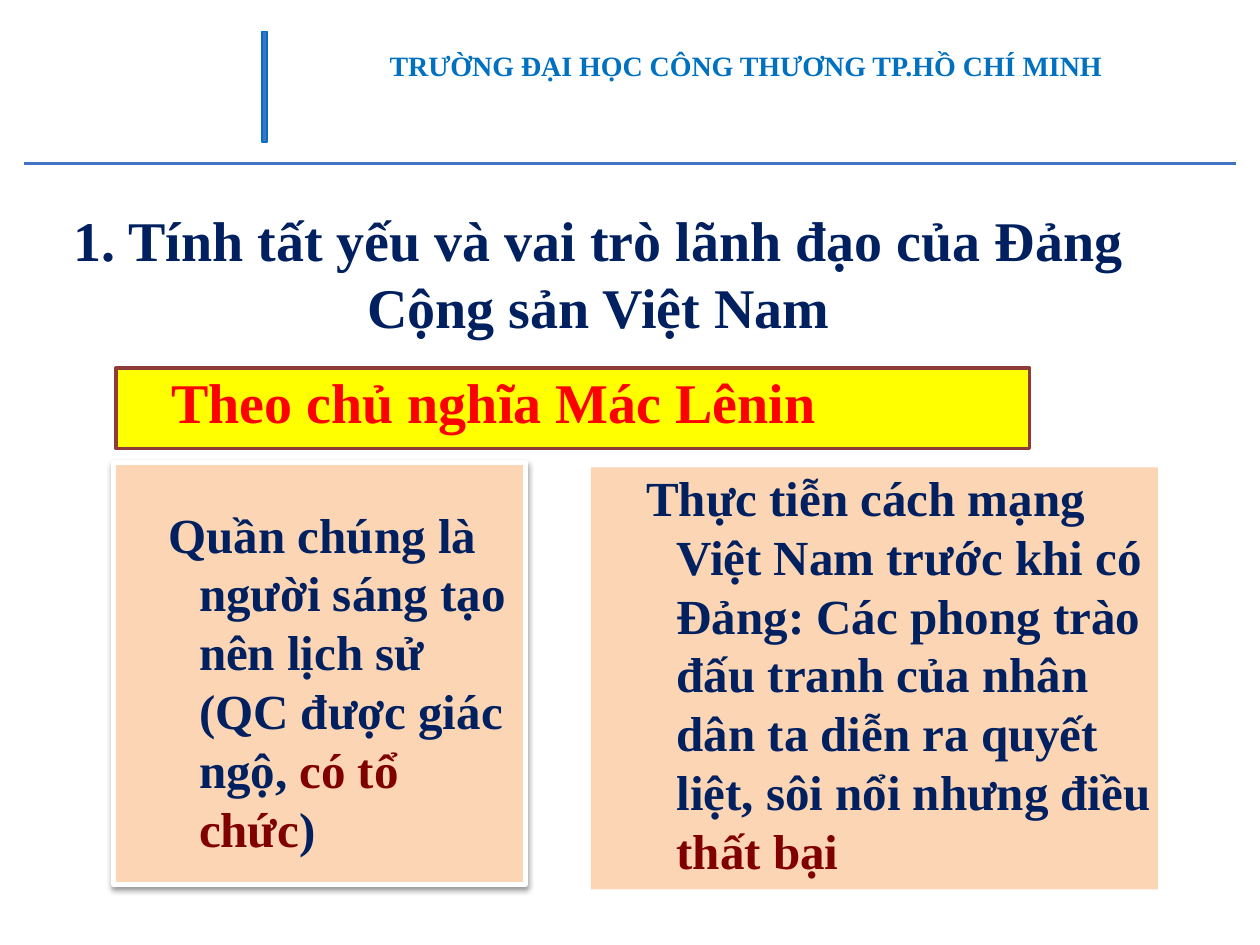
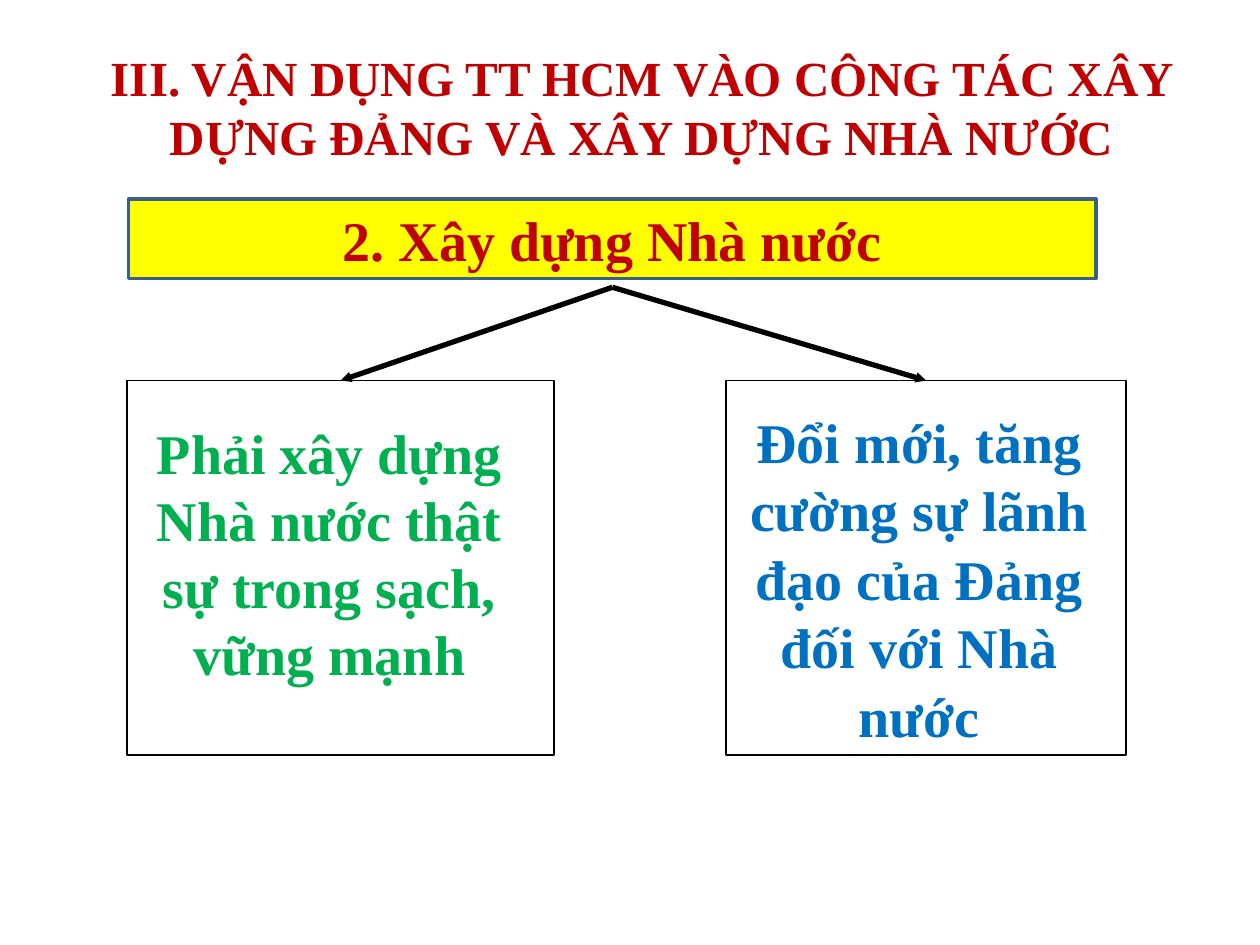
from lxml import etree
from pptx import Presentation
from pptx.dml.color import RGBColor
from pptx.enum.shapes import MSO_CONNECTOR, MSO_SHAPE
from pptx.enum.text import MSO_ANCHOR, PP_ALIGN
from pptx.oxml.ns import qn
from pptx.util import Inches, Pt

RECT = MSO_SHAPE.RECTANGLE
LINE = MSO_CONNECTOR.STRAIGHT
TOP, MIDDLE = MSO_ANCHOR.TOP, MSO_ANCHOR.MIDDLE
LEFT, CENTER = PP_ALIGN.LEFT, PP_ALIGN.CENTER
FONT = "Times New Roman"
NAVY, BLUE, STEEL = "002060", "0070C0", "4472C4"
RED, MAROON, CRIMSON = "FF0000", "800000", "C00000"
YELLOW, PEACH, GREEN = "FFFF00", "FCD5B5", "00B050"
BLACK, WHITE = "000000", "FFFFFF"
COLS, ROWS = 100, 75
HANG = (6.8, -2.4)


def cells(count):
    """Turn a count of grid cells into a length."""
    return Inches(round(count / 10, 2))


def color(code):
    """Turn a hex string into a colour."""
    return RGBColor.from_string(code)


def write(shape, parts, size, align=CENTER, anchor=MIDDLE, pads=None, hang=None):
    """Fill a shape with one paragraph made of (text, colour) parts."""
    frame = shape.text_frame
    frame.word_wrap = True
    frame.vertical_anchor = anchor
    if pads:
        frame.margin_left = frame.margin_bottom = 0
        frame.margin_top, frame.margin_right = map(cells, pads)
    para = frame.paragraphs[0]
    para.alignment = align
    if hang:
        props = para._p.get_or_add_pPr()
        props.set("marL", str(cells(hang[0])))
        props.set("indent", str(cells(hang[1])))
    para.text = parts[0][0]
    for words, _ in parts[1:]:
        para.add_run().text = words
    hues = [parts[0][1]] * (len(para.runs) - len(parts) + 1)
    hues += [hue for _, hue in parts[1:]]
    for run, hue in zip(para.runs, hues):
        run.font.name, run.font.size, run.font.bold = FONT, Pt(size), True
        run.font.color.rgb = color(hue)


def label(slide, area, words, size, hue, anchor=MIDDLE):
    """Add a centred text box."""
    box = slide.shapes.add_textbox(*map(cells, area))
    write(box, [(words, hue)], size, anchor=anchor)


def panel(slide, area, fill=None, edge=None, width=1):
    """Add a flat rectangle with an optional fill and edge."""
    shape = slide.shapes.add_shape(RECT, *map(cells, area))
    shape.shadow.inherit = False
    if fill:
        shape.fill.solid()
        shape.fill.fore_color.rgb = color(fill)
    else:
        shape.fill.background()
    if edge:
        shape.line.color.rgb = color(edge)
        shape.line.width = Pt(width)
    else:
        shape.line.fill.background()
    return shape


def shade(shape):
    """Give a shape a soft shadow below it."""
    effects = shape._element.spPr.find(qn("a:effectLst"))
    outer = etree.SubElement(effects, qn("a:outerShdw"), blurRad=str(Pt(3.1)),
                             dist=str(Pt(1.6)), dir="5400000", rotWithShape="0")
    hue = etree.SubElement(outer, qn("a:srgbClr"), val=BLACK)
    etree.SubElement(hue, qn("a:alpha"), val="38000")


def link(slide, start, end, hue, width):
    """Add a straight line without a shadow."""
    line = slide.shapes.add_connector(LINE, *map(cells, start + end))
    line.line.color.rgb = color(hue)
    line.line.width = Pt(width)
    etree.SubElement(line._element.spPr, qn("a:effectLst"))
    return line


def arrow(slide, start, box):
    """Add an arrow from a point to the top of a box."""
    line = link(slide, start, start, BLACK, 3)
    line.end_connect(box, 0)
    etree.SubElement(line.line._get_or_add_ln(), qn("a:tailEnd"),
                     type="triangle", w="sm", len="sm")


def header(slide):
    """Draw the school name, its upright bar and the rule below."""
    link(slide, (1.9, 13), (COLS - 1.9, 13), STEEL, 1.5)
    panel(slide, (20.8, 2.5, 0.4, 8.8), STEEL, BLUE)
    label(slide, (21.2, 1, 76, 8.3),
          "TRƯỜNG ĐẠI HỌC CÔNG THƯƠNG TP.HỒ CHÍ MINH", 16, BLUE)


def role(slide):
    """Build the slide on the role of the Party."""
    header(slide)
    label(slide, (0, 15.4, 95, 12.5),
          "1. Tính tất yếu và vai trò lãnh đạo của Đảng\vCộng sản Việt Nam",
          32, NAVY)
    theme = panel(slide, (9.2, 29.2, 72.5, 6.4), YELLOW, "8E3B39", 2)
    write(theme, [("Theo chủ nghĩa Mác Lênin", RED)], 32, LEFT, TOP, (0, 0), HANG)
    crowd = panel(slide, (9, 36.7, 32.7, 33.5), PEACH, WHITE, 3)
    shade(crowd)
    write(crowd, [("Quần chúng là người sáng tạo nên lịch sử (QC được giác ngộ, ",
                   NAVY), ("có tổ chức", MAROON), (")", NAVY)],
          28, LEFT, TOP, (3.3, 0), HANG)
    past = panel(slide, (46.9, 37.1, 45, 33.5), PEACH)
    write(past, [("Thực tiễn cách mạng Việt Nam trước khi có Đảng: Các phong trào "
                  "đấu tranh của nhân dân ta diễn ra quyết liệt, sôi nổi nhưng điều ",
                  NAVY), ("thất bại", MAROON)], 28, LEFT, TOP, (0, 0), HANG)


def state(slide):
    """Build the slide on building the State."""
    label(slide, (3.9, 3.3, 94, 10.4),
          "III. VẬN DỤNG TT HCM VÀO CÔNG TÁC XÂY DỰNG ĐẢNG VÀ XÂY DỰNG NHÀ NƯỚC",
          28, CRIMSON, TOP)
    theme = panel(slide, (10.2, 15.8, 76.8, 6.3), YELLOW, "3A5F8C", 2)
    write(theme, [("2. Xây dựng Nhà nước", CRIMSON)], 32)
    tasks = [
        (10.1, 33.9, (3, 1.8), GREEN,
         "Phải xây dựng Nhà nước thật sự trong sạch, vững mạnh"),
        (57.6, 31.8, (2, 1.1), BLUE,
         "Đổi mới, tăng cường sự lãnh đạo của Đảng đối với Nhà nước"),
    ]
    for left, wide, pads, hue, words in tasks:
        box = panel(slide, (left, 30.2, wide, 29.7), edge=BLACK)
        write(box, [(words, hue)], 32, CENTER, TOP, pads)
        if hue == BLUE:
            box.text_frame.paragraphs[0].line_spacing = 1.02
        arrow(slide, (48.6, 22.8), box)


def main():
    """Build and save both slides."""
    deck = Presentation()
    deck.slide_width, deck.slide_height = cells(COLS), cells(ROWS)
    for build in (role, state):
        build(deck.slides.add_slide(deck.slide_layouts[6]))
    deck.save("out.pptx")


if __name__ == "__main__":
    main()
